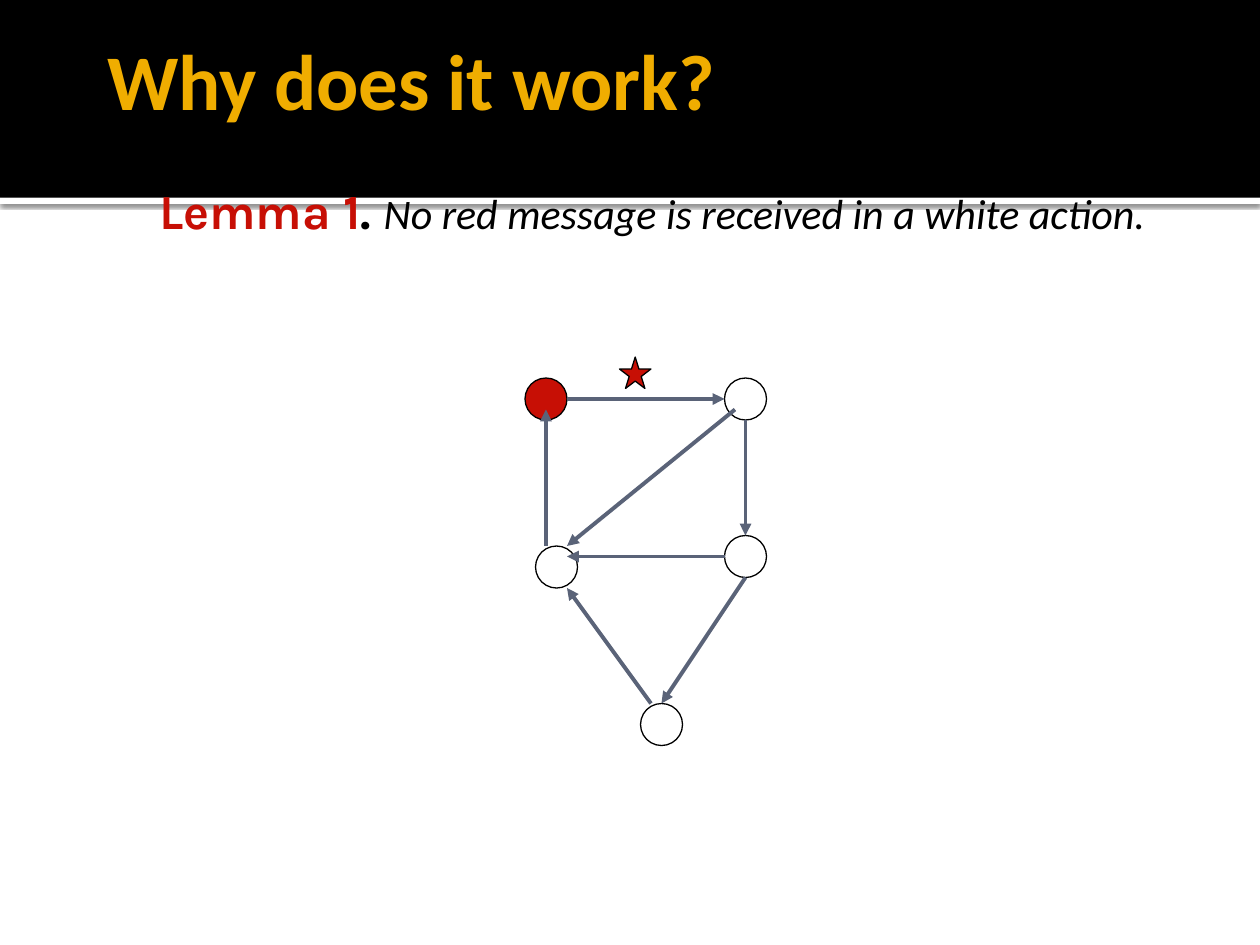
from lxml import etree
from pptx import Presentation
from pptx.dml.color import RGBColor
from pptx.enum.shapes import MSO_CONNECTOR, MSO_SHAPE
from pptx.enum.text import MSO_ANCHOR, MSO_AUTO_SIZE, PP_ALIGN
from pptx.oxml.ns import qn
from pptx.util import Pt

BLACK = RGBColor(0x00, 0x00, 0x00)
WHITE = RGBColor(0xFF, 0xFF, 0xFF)
GOLD = RGBColor(0xF0, 0xAD, 0x00)
RED = RGBColor(0xC7, 0x0F, 0x05)
SLATE = RGBColor(0x5A, 0x63, 0x78)

RECT = MSO_SHAPE.RECTANGLE
OVAL = MSO_SHAPE.OVAL
STAR = MSO_SHAPE.STAR_5_POINT
LINE = MSO_CONNECTOR.STRAIGHT
LEFT = PP_ALIGN.LEFT
TOP = MSO_ANCHOR.TOP
MIDDLE = MSO_ANCHOR.MIDDLE
FIXED = MSO_AUTO_SIZE.NONE

WIDTH, HEIGHT = 720, 540
NODE = 24


def add_run(par, text, size=24, font="Calibri", color=BLACK, bold=False, italic=False):
    run = par.add_run()
    run.text = text
    run.font.size = Pt(size)
    run.font.name = font
    run.font.color.rgb = color
    run.font.bold = bold
    run.font.italic = italic


class Deck:
    def __init__(self):
        self.file = Presentation()
        self.file.slide_width = Pt(WIDTH)
        self.file.slide_height = Pt(HEIGHT)
        self.slide = self.file.slides.add_slide(self.file.slide_layouts[5])
        self.shapes = self.slide.shapes

    def shape(self, kind, left, top, width, height, fill=None, line=None):
        item = self.shapes.add_shape(kind, Pt(left), Pt(top), Pt(width), Pt(height))
        item.shadow.inherit = False
        if fill is None:
            item.fill.background()
        else:
            item.fill.solid()
            item.fill.fore_color.rgb = fill
        if line is None:
            item.line.fill.background()
        else:
            item.line.color.rgb = line
            item.line.width = Pt(0.75)
        return item

    def strip(self, top, height):
        item = self.shape(RECT, 0, top, WIDTH, height, WHITE)
        group = item._element.spPr.find(qn("a:effectLst"))
        shade = etree.SubElement(group, qn("a:outerShdw"), blurRad=str(Pt(2.5)),
                                 dist=str(Pt(0.8)), dir="5400000", rotWithShape="0")
        tint = etree.SubElement(shade, qn("a:srgbClr"), val=str(BLACK))
        etree.SubElement(tint, qn("a:alpha"), val="60000")

    def frame(self, item, insets, anchor):
        frame = item.text_frame
        frame.word_wrap = True
        frame.auto_size = FIXED
        frame.vertical_anchor = anchor
        (frame.margin_left, frame.margin_top,
         frame.margin_right, frame.margin_bottom) = map(Pt, insets)
        par = frame.paragraphs[0]
        par.alignment = LEFT
        return par

    def title(self, text, left, top, width, height):
        item = self.shapes.title
        item.left, item.top, item.width, item.height = map(Pt, (left, top, width, height))
        par = self.frame(item, (7.2, 3.6, 3.6, 3.6), MIDDLE)
        add_run(par, text, size=45, color=GOLD, bold=True)
        self.shapes._spTree.append(item._element)

    def text(self, left, top, width, height, hang):
        item = self.shapes.add_textbox(Pt(left), Pt(top), Pt(width), Pt(height))
        par = self.frame(item, (7.2, 7.2, 7.2, 3.6), TOP)
        props = par._p.get_or_add_pPr()
        props.set("marL", str(Pt(hang)))
        props.set("indent", str(-Pt(hang)))
        return par

    def arrow(self, start, end):
        item = self.shapes.add_connector(LINE, *map(Pt, start + end))
        item.line.color.rgb = SLATE
        item.line.width = Pt(2.25)
        etree.SubElement(item.line._get_or_add_ln(), qn("a:tailEnd"), type="triangle")
        etree.SubElement(item._element.spPr, qn("a:effectLst"))


def main():
    deck = Deck()
    deck.strip(113, 3.6)
    deck.shape(RECT, 0, 0, WIDTH, 113, BLACK)
    deck.title("Why does it work?", 54, 0, 612, 90)

    lemma = deck.text(84, 96, 600, 108, 42)
    add_run(lemma, "Lemma 1", size=28, font="Karla", color=RED, bold=True)
    add_run(lemma, ". ", size=28, font="Karla", bold=True)
    add_run(lemma, "No red message is received in a white action.", italic=True)

    nodes = [(300, 216, RED), (414, 306, None), (306, 312, None),
             (414, 216, None), (366, 402, None)]
    for left, top, fill in nodes:
        deck.shape(OVAL, left, top, NODE, NODE, fill, BLACK)

    edges = [((324, 228), (414, 228)), ((426, 240), (426, 306)),
             ((414, 318), (324, 318)), ((312, 312), (312, 234)),
             ((420, 234), (324, 312)), ((426, 330), (378, 402)),
             ((372, 402), (324, 336))]
    for start, end in edges:
        deck.arrow(start, end)

    deck.shape(STAR, 354, 204, 18, 18, RED, BLACK)
    deck.file.save("out.pptx")


if __name__ == "__main__":
    main()
